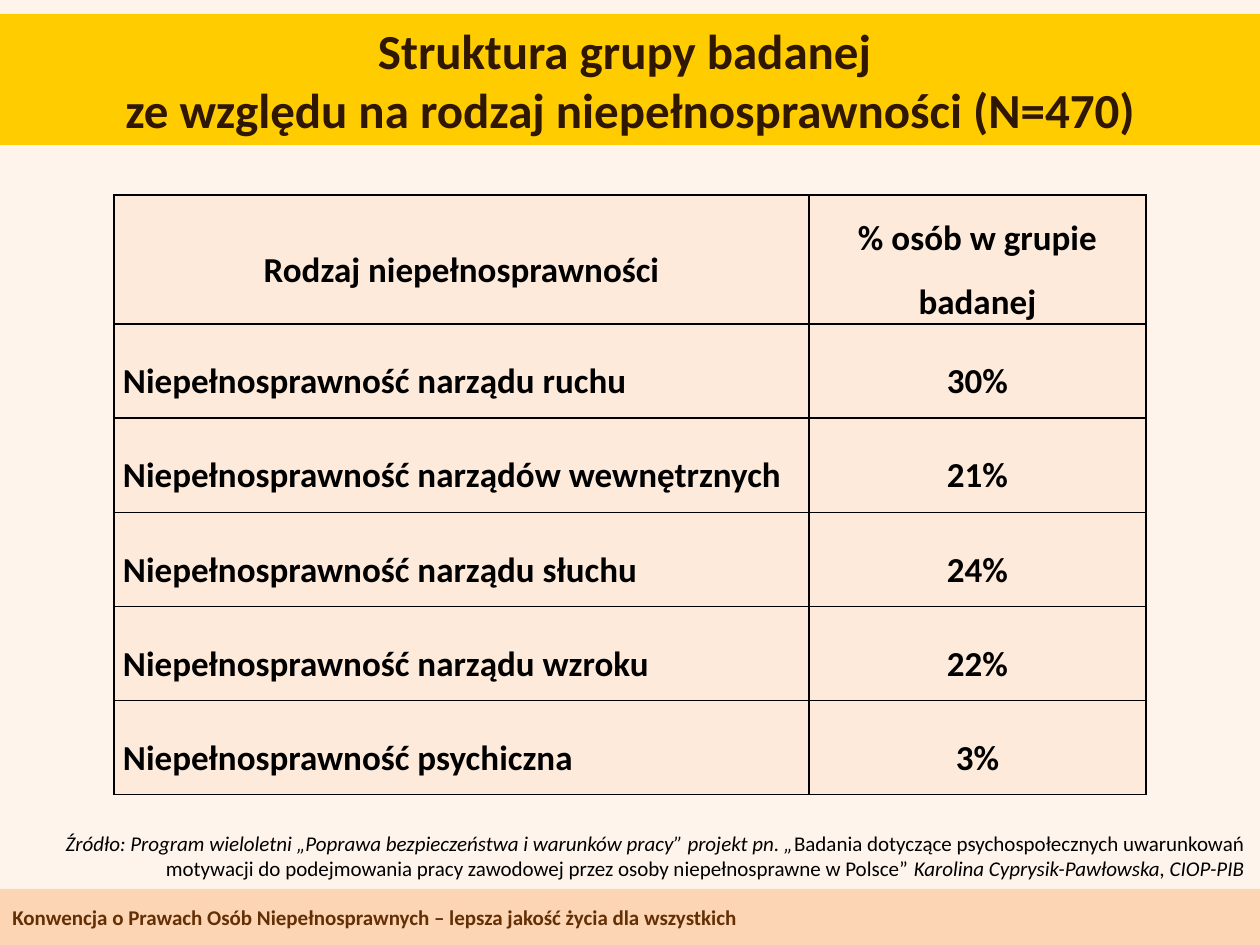
from lxml.etree import SubElement
from pptx import Presentation
from pptx.dml.color import RGBColor
from pptx.enum.shapes import MSO_SHAPE as Shape
from pptx.enum.text import MSO_ANCHOR as Anchor, MSO_AUTO_SIZE as AutoSize, PP_ALIGN as Align
from pptx.oxml.ns import qn
from pptx.util import Pt

PX = 914400 / 126
CELL_FILL = "FDEADA"
RESULTS = [
    ("Rodzaj niepełnosprawności", "% osób w grupie badanej"),
    ("Niepełnosprawność narządu ruchu", "30%"),
    ("Niepełnosprawność narządów wewnętrznych", "21%"),
    ("Niepełnosprawność narządu słuchu", "24%"),
    ("Niepełnosprawność narządu wzroku", "22%"),
    ("Niepełnosprawność psychiczna", "3%"),
]
SOURCE = [
    ("Źródło: Program wieloletni „Poprawa bezpieczeństwa i warunków pracy” projekt pn. „", True),
    ("Badania dotyczące psychospołecznych uwarunkowań motywacji do podejmowania pracy "
     "zawodowej przez osoby niepełnosprawne w Polsce”", False),
    (" Karolina Cyprysik-Pawłowska, CIOP-PIB", True),
]


def px(length):
    """Turn pixels into EMU."""
    return round(length * PX)


def scaled(box):
    """Turn a pixel box into EMU."""
    return [px(length) for length in box]


def paint(fill, color):
    """Fill with one solid hex colour."""
    fill.solid()
    fill.fore_color.rgb = RGBColor.from_string(color)


def write(paragraph, text, size=12, color="000000", bold=False, italic=False,
          align=Align.LEFT, spacing=1.0):
    """Add formatted text to a paragraph, with a line break at each newline."""
    paragraph.alignment = align
    paragraph.line_spacing = spacing
    for index, line in enumerate(text.split("\n")):
        if index:
            paragraph.add_line_break()
        run = paragraph.add_run()
        run.text = line
        font = run.font
        font.name, font.size, font.bold, font.italic = "Calibri", Pt(size), bold, italic
        font.color.rgb = RGBColor.from_string(color)


def prepare_frame(shape):
    """Wrap and centre a shape's text vertically, and return its first paragraph."""
    frame = shape.text_frame
    frame.auto_size = AutoSize.NONE
    frame.word_wrap = True
    frame.vertical_anchor = Anchor.MIDDLE
    return frame.paragraphs[0]


def add_heading(slide, box):
    """Place the title on its yellow band."""
    title = slide.shapes.title
    title.left, title.top, title.width, title.height = scaled(box)
    paint(title.fill, "FFCC00")
    write(prepare_frame(title),
          "Struktura grupy badanej \nze względu na rodzaj niepełnosprawności (N=470)",
          size=28, color="301702", bold=True, align=Align.CENTER)


def add_borders(cell):
    """Draw thin black lines on all four sides of a cell."""
    properties = cell._tc.get_or_add_tcPr()
    for side in ("lnL", "lnR", "lnT", "lnB"):
        line = SubElement(properties, qn(f"a:{side}"), w=str(Pt(1)))
        SubElement(SubElement(line, qn("a:solidFill")), qn("a:srgbClr"), val="000000")


def add_results(slide, box, name_width=695, header_height=129):
    """Place the table of disability types and their shares."""
    width, height = box[2:]
    table = slide.shapes.add_table(len(RESULTS), 2, *scaled(box)).table
    table.first_row = table.horz_banding = False
    table.columns[0].width = px(name_width)
    table.columns[1].width = px(width - name_width)
    row_height = (height - header_height) / (len(RESULTS) - 1)
    for row, texts in enumerate(RESULTS):
        table.rows[row].height = px(row_height if row else header_height)
        for column, text in enumerate(texts):
            cell = table.cell(row, column)
            cell.margin_left = cell.margin_right = px(9)
            cell.margin_top = cell.margin_bottom = 0
            cell.vertical_anchor = Anchor.MIDDLE
            add_borders(cell)
            paint(cell.fill, CELL_FILL)
            write(cell.text_frame.paragraphs[0], text, size=20, bold=True, spacing=1.5,
                  align=Align.LEFT if row and not column else Align.CENTER)


def add_source(slide, box):
    """Place the right-aligned source note."""
    paragraph = prepare_frame(slide.shapes.add_textbox(*scaled(box)))
    for text, italic in SOURCE:
        write(paragraph, text, italic=italic, align=Align.RIGHT)


def add_footer(slide, box):
    """Place the footer band and its slogan."""
    left, top, width, height = box
    band = slide.shapes.add_shape(Shape.RECTANGLE, *scaled(box))
    band.shadow.inherit = False
    paint(band.fill, "FCD5B5")
    band.line.fill.background()
    slogan = slide.shapes.add_textbox(*scaled((left, top + 9, width, height - 17)))
    write(prepare_frame(slogan),
          "Konwencja o Prawach Osób Niepełnosprawnych – lepsza jakość życia dla wszystkich",
          color="642F04", bold=True)


def main():
    """Build the slide and save it."""
    deck = Presentation()
    deck.slide_width, deck.slide_height = px(1260), px(945)
    slide = deck.slides.add_slide(deck.slide_layouts[5])
    paint(slide.background.fill, "FEF4EC")
    add_footer(slide, (0, 889, 1260, 56))
    add_results(slide, (114, 195, 1032, 600))
    add_heading(slide, (0, 14, 1260, 131))
    add_source(slide, (0, 824, 1257, 63))
    deck.save("out.pptx")


if __name__ == "__main__":
    main()
